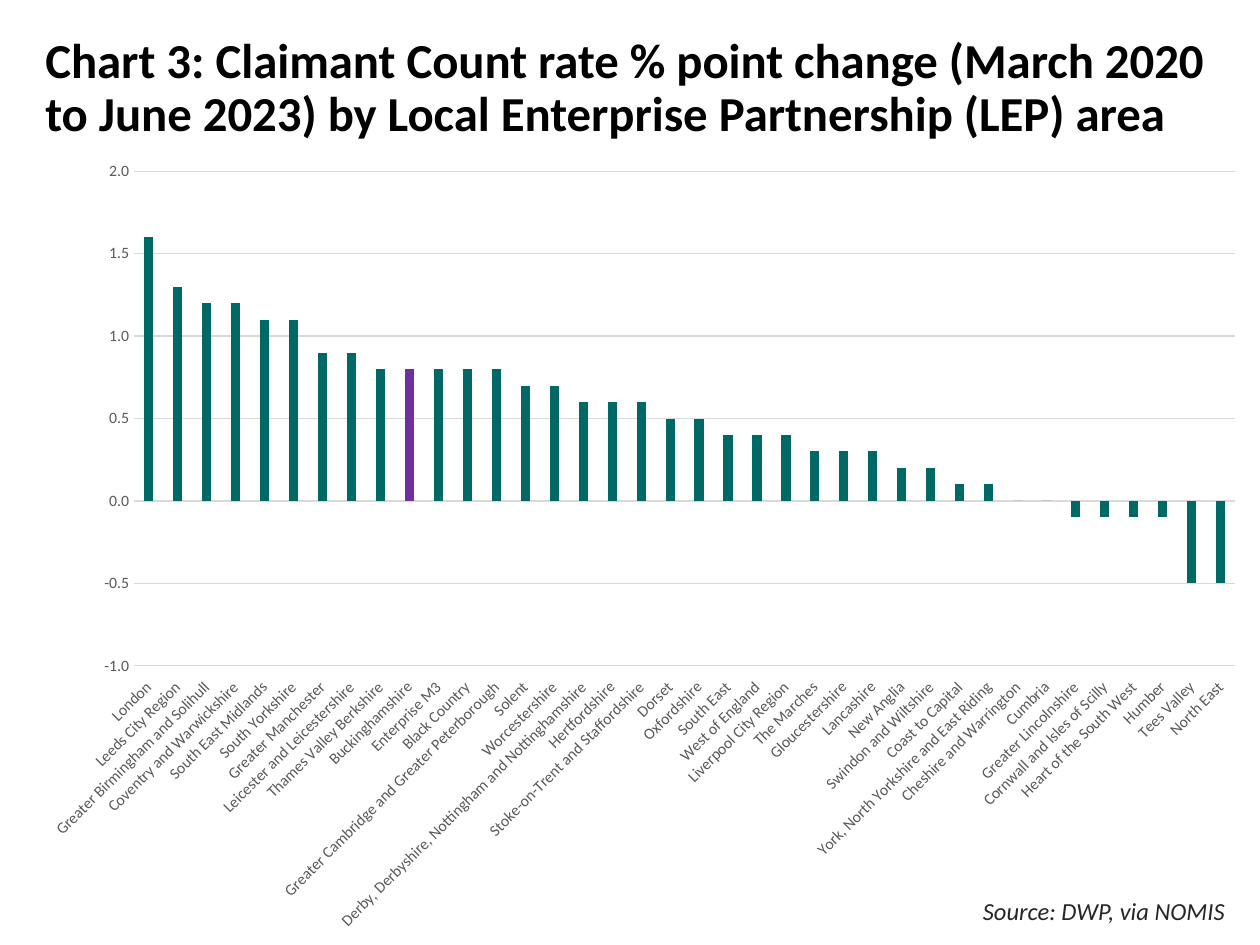
from lxml import etree
from pptx import Presentation
from pptx.chart.data import CategoryChartData
from pptx.dml.color import RGBColor
from pptx.enum.chart import XL_CHART_TYPE as Kind, XL_TICK_LABEL_POSITION as Spot, XL_TICK_MARK as Tick
from pptx.enum.text import MSO_ANCHOR as Anchor, PP_ALIGN as Align
from pptx.oxml.ns import qn
from pptx.util import Inches, Pt

TEAL = RGBColor(0x00, 0x69, 0x65)
PURPLE = RGBColor(0x70, 0x30, 0xA0)
BLACK = RGBColor(0x00, 0x00, 0x00)
DARK = RGBColor(0x26, 0x26, 0x26)
GREY = RGBColor(0x59, 0x59, 0x59)
PALE = RGBColor(0xD9, 0xD9, 0xD9)
FACE = "Calibri"

TITLE = ("Chart 3: Claimant Count rate % point change (March 2020 "
         "to June 2023) by Local Enterprise Partnership (LEP) area")
SOURCE = "Source: DWP, via NOMIS"
FOCUS = "Buckinghamshire"
# Change in percentage points -> areas, in falling order
RATES = {
    1.6: ["London"],
    1.3: ["Leeds City Region"],
    1.2: ["Greater Birmingham and Solihull", "Coventry and Warwickshire"],
    1.1: ["South East Midlands", "South Yorkshire"],
    0.9: ["Greater Manchester", "Leicester and Leicestershire"],
    0.8: ["Thames Valley Berkshire", FOCUS, "Enterprise M3", "Black Country",
          "Greater Cambridge and Greater Peterborough"],
    0.7: ["Solent", "Worcestershire"],
    0.6: ["Derby, Derbyshire, Nottingham and Nottinghamshire", "Hertfordshire",
          "Stoke-on-Trent and Staffordshire"],
    0.5: ["Dorset", "Oxfordshire"],
    0.4: ["South East", "West of England", "Liverpool City Region"],
    0.3: ["The Marches", "Gloucestershire", "Lancashire"],
    0.2: ["New Anglia", "Swindon and Wiltshire"],
    0.1: ["Coast to Capital", "York, North Yorkshire and East Riding"],
    0: ["Cheshire and Warrington", "Cumbria"],
    -0.1: ["Greater Lincolnshire", "Cornwall and Isles of Scilly",
           "Heart of the South West", "Humber"],
    -0.5: ["Tees Valley", "North East"],
}
AREAS = [(area, rate) for rate, areas in RATES.items() for area in areas]

# Left, top, width, height in inches
TITLE_BOX = (0.26, 0.2, 9.48, 1.02)
CHART_BOX = (0.18, 1.17, 9.82, 6.33)
SOURCE_BOX = (7.44, 7.06, 2.38, 0.34)
PLOT = {"x": 0.09, "y": 0.03, "w": 0.89, "h": 0.62}  # shares of the chart


def style(font, color, **form):
    font.name = FACE
    font.color.rgb = color
    for key, value in form.items():
        setattr(font, key, value)


def place(shape, box):
    shape.left, shape.top, shape.width, shape.height = map(Inches, box)


def write(shape, text, align, color, **form):
    frame = shape.text_frame
    frame.word_wrap = True
    para = frame.paragraphs[0]
    para.text = text
    para.alignment = align
    style(para.runs[0].font, color, **form)
    return frame


def fix_plot(chart):
    """Pin the inner plot area to the shares in PLOT."""
    area = chart._chartSpace.chart.plotArea
    for old in area.findall(qn("c:layout")):
        area.remove(old)
    layout = etree.Element(qn("c:layout"))
    manual = etree.SubElement(layout, qn("c:manualLayout"))
    modes = {"layoutTarget": "inner", "xMode": "edge", "yMode": "edge"}
    for tag, value in {**modes, **PLOT}.items():
        etree.SubElement(manual, qn("c:" + tag)).set("val", str(value))
    area.insert(0, layout)


def add_chart(slide):
    data = CategoryChartData(number_format="0.0")
    data.categories = [area for area, _ in AREAS]
    data.add_series("Series 1", [rate for _, rate in AREAS])
    chart = slide.shapes.add_chart(
        Kind.COLUMN_CLUSTERED, *map(Inches, CHART_BOX), data).chart
    chart.has_title = chart.has_legend = False
    style(chart.font, BLACK, size=Pt(10))
    fix_plot(chart)

    plot = chart.plots[0]
    plot.gap_width, plot.overlap = 219, -27
    plot.vary_by_categories = False
    bars = plot.series[0]
    bars.invert_if_negative = False
    focus = bars.points[[area for area, _ in AREAS].index(FOCUS)]
    for part, color in ((bars, TEAL), (focus, PURPLE)):
        part.format.fill.solid()
        part.format.fill.fore_color.rgb = color

    cats, vals = chart.category_axis, chart.value_axis
    for axis in (cats, vals):
        axis.major_tick_mark = axis.minor_tick_mark = Tick.NONE
        style(axis.tick_labels.font, GREY, size=Pt(9))
    cats.tick_label_position = Spot.LOW
    cats._element.find(qn("c:txPr")).find(qn("a:bodyPr")).set("rot", str(-45 * 60000))
    vals.minimum_scale, vals.maximum_scale, vals.major_unit = -1, 2, 0.5
    vals.tick_labels.number_format = "#,##0.0"
    vals.tick_labels.number_format_is_linked = False
    vals.format.line.fill.background()
    for line in (cats.format.line, vals.major_gridlines.format.line):
        line.color.rgb = PALE
        line.width = Pt(0.75)


def main():
    deck = Presentation()
    deck.slide_width, deck.slide_height = Inches(10), Inches(7.5)
    slide = deck.slides.add_slide(deck.slide_layouts[5])

    title = slide.shapes.title
    place(title, TITLE_BOX)
    frame = write(title, TITLE, Align.LEFT, BLACK, size=Pt(27.9), bold=True)
    frame.vertical_anchor = Anchor.MIDDLE
    frame.paragraphs[0].line_spacing = 0.9

    note = slide.shapes.add_textbox(*map(Inches, SOURCE_BOX))
    write(note, SOURCE, Align.RIGHT, DARK, size=Pt(14), italic=True)
    add_chart(slide)
    deck.save("out.pptx")


if __name__ == "__main__":
    main()
